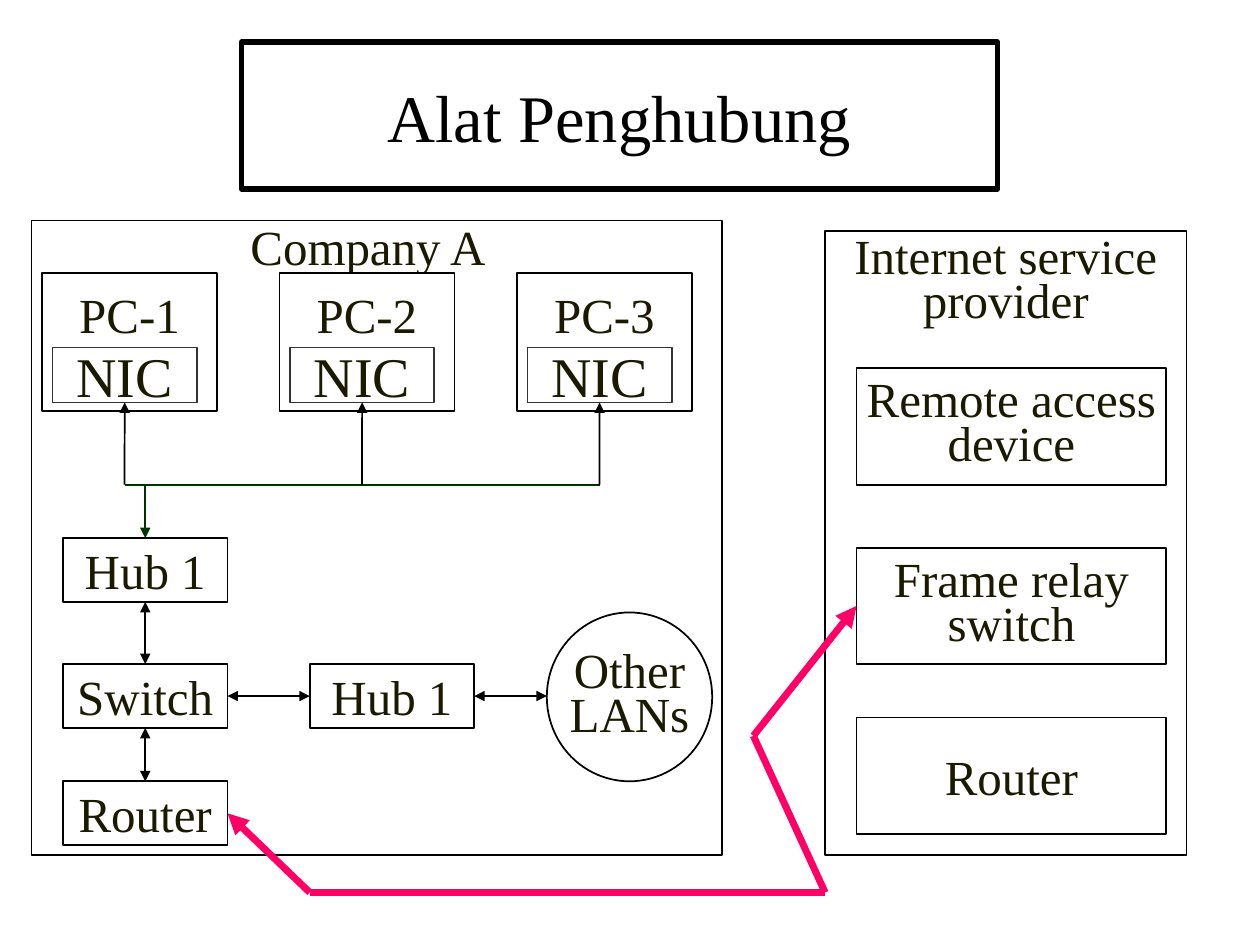
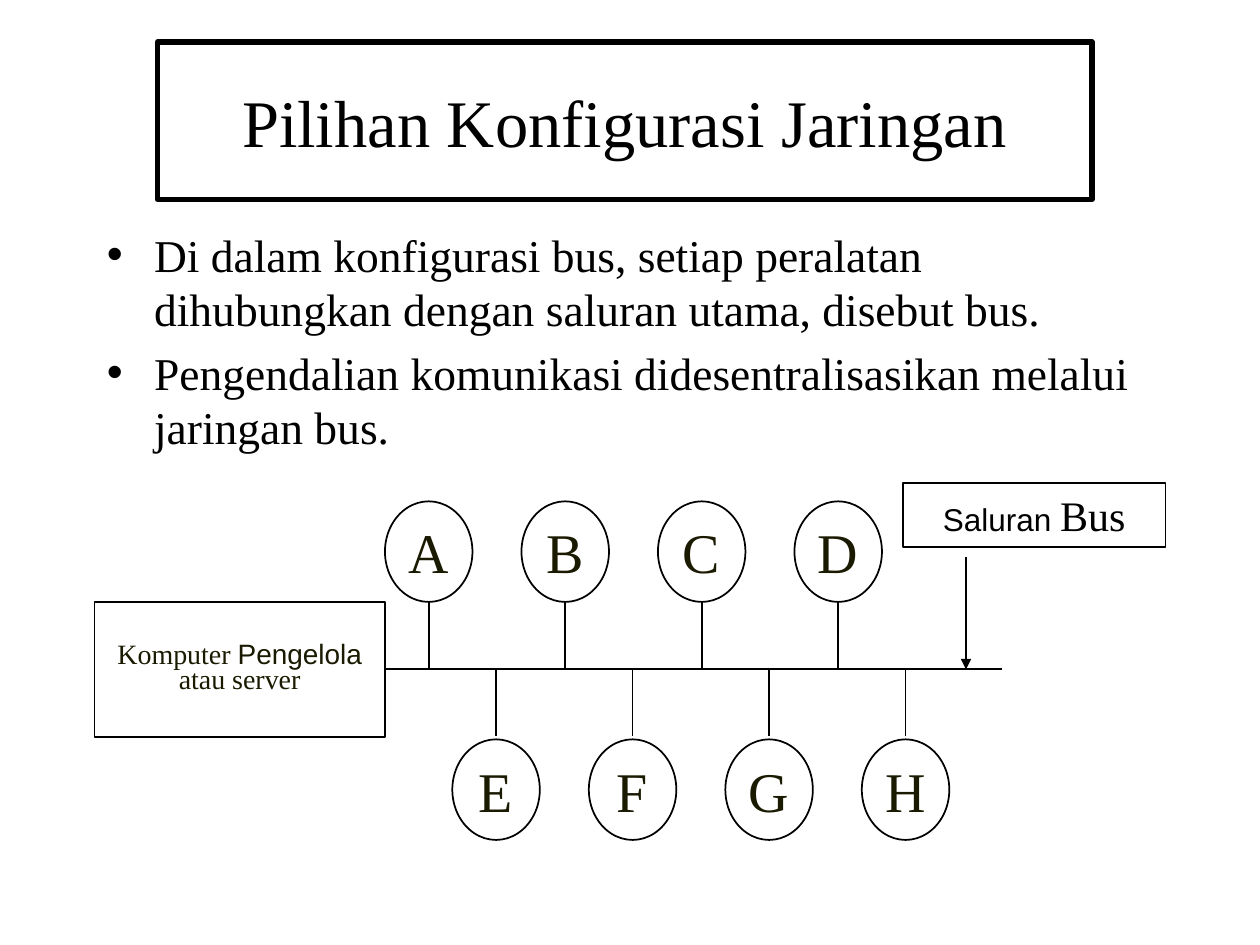
from dataclasses import dataclass

from lxml.etree import SubElement
from pptx import Presentation
from pptx.dml.color import RGBColor
from pptx.enum.shapes import MSO_CONNECTOR as Connector, MSO_SHAPE as Preset
from pptx.enum.text import MSO_ANCHOR as Anchor, MSO_AUTO_SIZE as AutoSize, PP_ALIGN as Align
from pptx.oxml.ns import qn
from pptx.util import Pt


@dataclass(frozen=True)
class Theme:
    serif: str = "Times New Roman"
    sans: str = "Arial"
    black: str = "000000"
    white: str = "FFFFFF"
    ink: str = "1A1A00"
    card_edge: str = "333333"
    lan_wire: str = "003300"
    wan_link: str = "FF0066"
    title: int = 38
    large: int = 32
    label: int = 28
    body: int = 26
    bus: int = 24
    note: int = 18
    small: int = 16
    tight: float = 0.75


THEME = Theme()
TOP, LEFT, BOTTOM, RIGHT = range(4)


def rgb(value):
    return RGBColor.from_string(value)


# Shared text, shape and line helpers
def add_run(paragraph, text, size, color=THEME.ink, font=THEME.serif):
    run = paragraph.add_run()
    run.text = text
    run.font.size = Pt(size)
    run.font.name = font
    run.font.color.rgb = rgb(color)


def write_lines(frame, lines, size, align=Align.CENTER, color=THEME.ink, spacing=None):
    """Write one paragraph per line; a line is a text or a list of (text, size, font)."""
    for index, line in enumerate(lines):
        paragraph = frame.add_paragraph() if index else frame.paragraphs[0]
        paragraph.alignment = align
        if spacing:
            paragraph.line_spacing = spacing
        runs = [(line, size, THEME.serif)] if isinstance(line, str) else line
        for text, run_size, font in runs:
            add_run(paragraph, text, run_size, color, font)


def add_box(slide, box, lines=(), size=THEME.label, preset=Preset.RECTANGLE,
            edge=THEME.black, color=THEME.ink):
    shape = slide.shapes.add_shape(preset, *map(Pt, box))
    shape.shadow.inherit = False
    shape.fill.solid()
    shape.fill.fore_color.rgb = rgb(THEME.white)
    shape.line.color.rgb = rgb(edge)
    shape.line.width = Pt(1)
    frame = shape.text_frame
    frame.word_wrap = False
    frame.vertical_anchor = Anchor.MIDDLE
    spacing = THEME.tight if len(lines) > 1 else None
    write_lines(frame, lines, size, color=color, spacing=spacing)
    return shape


def add_text(slide, box, lines, size, **style):
    frame = slide.shapes.add_textbox(*map(Pt, box)).text_frame
    frame.word_wrap = True
    write_lines(frame, lines, size, **style)
    return frame


def add_line(slide, start, end, color=THEME.black, width=1, head=False, tail=False):
    """Draw a line; each end is a point (x, y) or a join (shape, side)."""
    joins = [not isinstance(place[0], (int, float)) for place in (start, end)]
    points = [(0, 0) if joined else place for joined, place in zip(joins, (start, end))]
    line = slide.shapes.add_connector(
        Connector.STRAIGHT, *(Pt(value) for point in points for value in point))
    if joins[0]:
        line.begin_connect(*start)
    if joins[1]:
        line.end_connect(*end)
    line.line.color.rgb = rgb(color)
    line.line.width = Pt(width)
    properties = line.line._get_or_add_ln()
    for wanted, tag in ((head, "a:headEnd"), (tail, "a:tailEnd")):
        if wanted:
            SubElement(properties, qn(tag), type="triangle")
    SubElement(line._element.spPr, qn("a:effectLst"))


def add_titled_slide(presentation, title, box):
    slide = presentation.slides.add_slide(presentation.slide_layouts[5])
    shape = slide.shapes.title
    shape.left, shape.top, shape.width, shape.height = map(Pt, box)
    shape.line.color.rgb = rgb(THEME.black)
    shape.line.width = Pt(3)
    frame = shape.text_frame
    frame.auto_size = AutoSize.NONE
    frame.vertical_anchor = Anchor.MIDDLE
    write_lines(frame, [title], THEME.title, color=THEME.black)
    return slide


# Slide 1: company network
def draw_company(slide, box):
    left, top = box[:2]
    add_box(slide, box)
    add_text(slide, (left + 118, top - 6, 165, 40), ["Company A"], THEME.label, align=Align.LEFT)

    # PCs with their network cards, wired to one line
    wire_y = top + 151
    pc_pitch, first_pc = 135.7, left + 6
    wire_start = first_pc + 47.2
    cards = []
    for index in range(3):
        pc_left = first_pc + index * pc_pitch
        pc = add_box(slide, (pc_left, top + 30, 100, 79), [f"PC-{index + 1}"])
        pc.text_frame.margin_bottom = Pt(36)
        cards.append(add_box(slide, (pc_left + 6, top + 72.5, 82.5, 31.5), ["NIC"],
                             THEME.large, edge=THEME.card_edge))
    add_line(slide, (wire_start, wire_y), (wire_start + 2 * pc_pitch, wire_y), THEME.lan_wire)
    for index, card in enumerate(cards):
        add_line(slide, (wire_start + index * pc_pitch, wire_y), (card, BOTTOM), tail=True)

    # Device chain below the PCs
    device_size = (94, 36.5)
    hub, switch, router = (
        add_box(slide, (left + 18, top + offset, *device_size), [name])
        for name, offset in (("Hub 1", 181.5), ("Switch", 253.5), ("Router", 320.5)))
    second_hub = add_box(slide, (left + 159, top + 253.5, *device_size), ["Hub 1"])
    add_box(slide, (left + 294.5, top + 224, 94.5, 96.5), ["Other", "LANs"], preset=Preset.OVAL)
    add_line(slide, (left + 65, wire_y), (hub, TOP), THEME.lan_wire, tail=True)
    for upper, lower in ((hub, switch), (switch, router)):
        add_line(slide, (lower, TOP), (upper, BOTTOM), head=True, tail=True)
    add_line(slide, (switch, RIGHT), (second_hub, LEFT), head=True, tail=True)
    add_line(slide, (second_hub, RIGHT), (left + 294.5, top + 271.75), head=True, tail=True)
    return router


# Slide 1: internet service provider
def draw_provider(slide, box):
    left, top, width = box[:3]
    add_box(slide, box)
    add_text(slide, (left, top + 1, width, 58), ["Internet service provider"],
             THEME.label, spacing=THEME.tight)
    devices = ((["Remote access", "device"], 78.5),
               (["Frame relay", "switch"], 181),
               (["Router"], 278))
    shapes = [add_box(slide, (left + 18, top + offset, 177, 66.5), lines)
              for lines, offset in devices]
    return shapes[1]


def draw_wan_link(slide, router, relay):
    corners = [(177, 510), (471.5, 510), (430.5, 420.5)]
    stops = [(router, RIGHT), *corners, (relay, LEFT)]
    last = len(stops) - 2
    for index, (start, end) in enumerate(zip(stops, stops[1:])):
        add_line(slide, start, end, THEME.wan_link, 4, head=index == 0, tail=index == last)


def build_devices_slide(presentation):
    slide = add_titled_slide(presentation, "Alat Penghubung", (138, 24, 432, 84))
    router = draw_company(slide, (18, 126, 394.5, 362.5))
    relay = draw_provider(slide, (471.5, 132, 206.5, 356.5))
    draw_wan_link(slide, router, relay)


# Slide 2: bullets
def draw_bullets(slide, box, lines):
    frame = add_text(slide, box, lines, THEME.body, align=Align.LEFT, color=THEME.black)
    for paragraph in frame.paragraphs:
        paragraph.space_before = Pt(5.2)
        properties = paragraph._p.get_or_add_pPr()
        properties.set("marL", str(Pt(27)))
        properties.set("indent", str(Pt(-27)))
        SubElement(properties, qn("a:buFont"), typeface=THEME.sans)
        SubElement(properties, qn("a:buChar"), char="•")


# Slide 2: bus diagram
def draw_bus(slide, left, top):
    bus_y = top + 106.5
    server_lines = [[("Komputer ", THEME.small, THEME.serif), ("Pengelola", THEME.small, THEME.sans)],
                    "atau server"]
    server = add_box(slide, (left, top + 68, 166, 77), server_lines, THEME.small)
    add_line(slide, (server, RIGHT), (left + 518.5, bus_y))

    # Stations above and below the bus
    node_width, node_height, pitch = 50, 57.5, 78
    rows = (("ABCD", 166, 10.5, 68), ("EFGH", 204.5, 146.5, 144.5))
    for names, first_left, node_top, stem_end in rows:
        for index, name in enumerate(names):
            node_left = left + first_left + index * pitch
            add_box(slide, (node_left, top + node_top, node_width, node_height), [name],
                    THEME.large, Preset.OVAL)
            center = node_left + node_width / 2
            add_line(slide, (center, bus_y), (center, top + stem_end))

    # Label pointing at the bus
    label = [("Saluran ", THEME.note, THEME.sans), ("Bus", THEME.bus, THEME.serif)]
    add_box(slide, (left + 462, top, 150, 36.5), [label], color=THEME.black)
    add_line(slide, (left + 498, top + 42.5), (left + 498, bus_y), tail=True)


def build_bus_slide(presentation):
    slide = add_titled_slide(presentation, "Pilihan Konfigurasi Jaringan", (90, 24, 534, 90))
    draw_bullets(slide, (54, 126, 612, 144), [
        "Di dalam konfigurasi bus, setiap peralatan dihubungkan dengan saluran utama, disebut bus.",
        "Pengendalian komunikasi didesentralisasikan melalui jaringan bus.",
    ])
    draw_bus(slide, 54, 276)


def main():
    presentation = Presentation()
    presentation.slide_width, presentation.slide_height = Pt(720), Pt(540)
    build_devices_slide(presentation)
    build_bus_slide(presentation)
    presentation.save("out.pptx")


if __name__ == "__main__":
    main()
